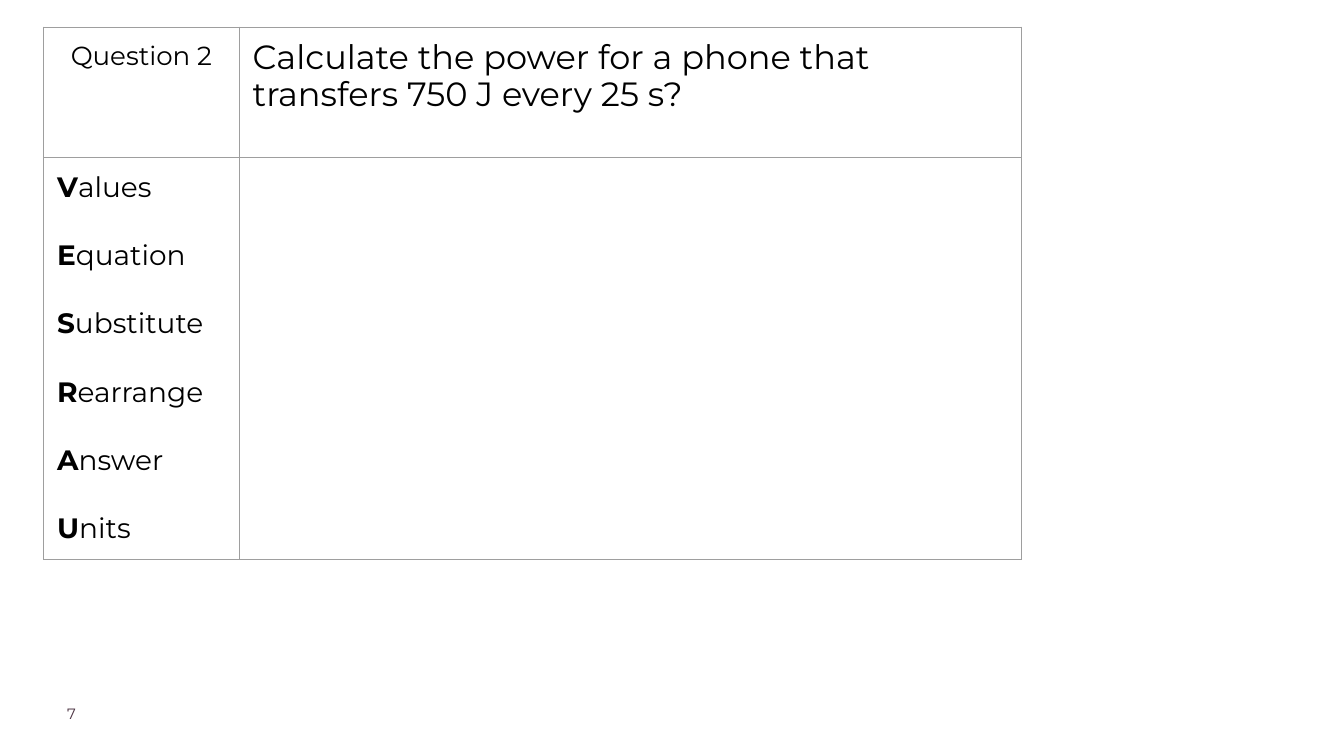
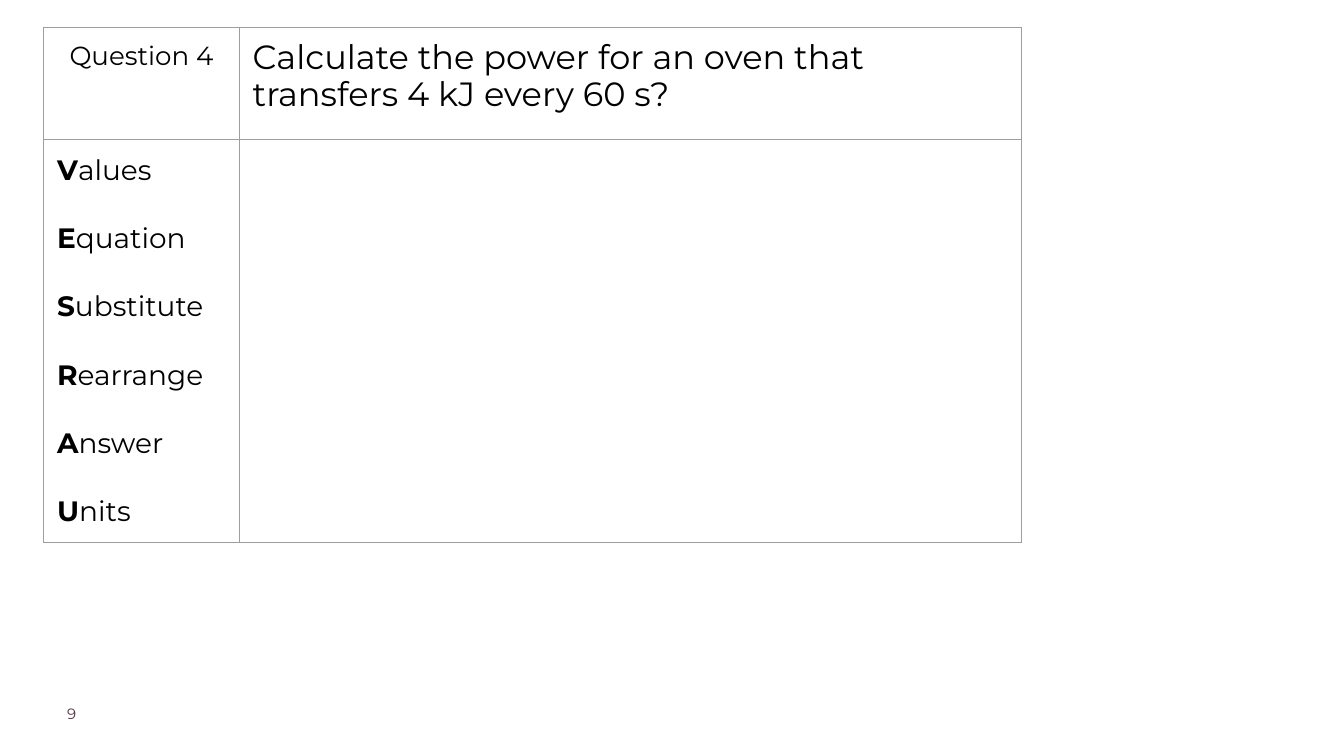
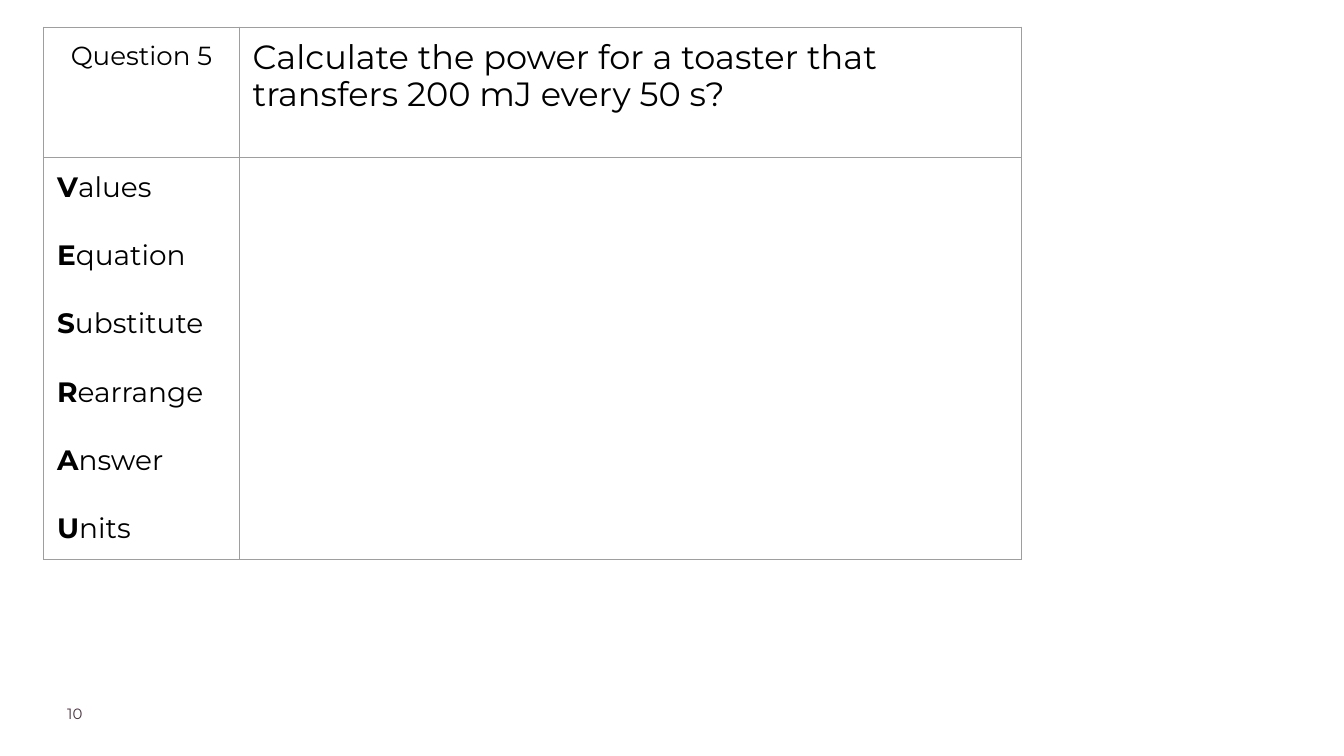
from lxml.etree import fromstring
from pptx import Presentation
from pptx.dml.color import RGBColor
from pptx.enum.text import PP_ALIGN
from pptx.oxml.ns import nsdecls
from pptx.util import Pt

FONT = "Montserrat"
COLORS = {"text": "000000", "number": "4B3241", "border": "9E9E9E"}
STEPS = ["Values", "Equation", "Substitute", "Rearrange", "Answer", "Units"]
COL_WIDTHS = (209.5, 838)
STEPS_HEIGHT = 431.5
CELL_MARGIN = 14.4

# Page number, question label, question, height of the question row
QUESTIONS = [
    (7, "Question 2",
     "Calculate the power for a phone that transfers 750 J every 25 s?", 139.3),
    (9, "Question 4",
     "Calculate the power for an oven that transfers 4 kJ every 60 s?", 121),
    (10, "Question 5",
     "Calculate the power for a toaster that transfers 200 mJ every 50 s?", 139.3),
]


def add_run(p, text, size, color="text", bold=False):
    r = p.add_run()
    r.text = text
    r.font.name = FONT
    r.font.size = Pt(size)
    r.font.bold = bold
    r.font.color.rgb = RGBColor.from_string(COLORS[color])


def style_cell(cell):
    cell.margin_left = cell.margin_right = Pt(CELL_MARGIN)
    cell.margin_top = cell.margin_bottom = Pt(CELL_MARGIN)
    cell.fill.background()
    # Borders come before the fill in the cell properties
    tcPr = cell._tc.get_or_add_tcPr()
    for i, side in enumerate(("lnL", "lnR", "lnT", "lnB")):
        tcPr.insert(i, fromstring(
            f'<a:{side} {nsdecls("a")} w="{Pt(0.75)}"><a:solidFill>'
            f'<a:srgbClr val="{COLORS["border"]}"/></a:solidFill></a:{side}>'))


def add_steps(tf):
    for i, step in enumerate(STEPS):
        p = tf.add_paragraph() if i else tf.paragraphs[0]
        if i:
            p.space_before = Pt(36.57)  # one line of text
        add_run(p, step[0], 30, bold=True)
        add_run(p, step[1:], 30)


def add_question_table(s, label, question, question_height):
    heights = (question_height, STEPS_HEIGHT)
    table = s.shapes.add_table(2, 2, Pt(46.8), Pt(28.8),
                               Pt(sum(COL_WIDTHS)), Pt(sum(heights))).table
    table.first_row = table.horz_banding = False
    for col, width in zip(table.columns, COL_WIDTHS):
        col.width = Pt(width)
    for row, height in zip(table.rows, heights):
        row.height = Pt(height)
    for cell in table.iter_cells():
        style_cell(cell)

    p = table.cell(0, 0).text_frame.paragraphs[0]
    p.alignment = PP_ALIGN.CENTER
    add_run(p, label, 28)
    p = table.cell(0, 1).text_frame.paragraphs[0]
    p.line_spacing = 0.9
    add_run(p, question, 36)
    add_steps(table.cell(1, 0).text_frame)


def add_page_number(s, number):
    tf = s.shapes.add_textbox(Pt(72), Pt(754.5), Pt(113), Pt(28)).text_frame
    tf.word_wrap = True
    tf.margin_left = tf.margin_right = tf.margin_top = tf.margin_bottom = 0
    add_run(tf.paragraphs[0], str(number), 16, "number")


def main():
    prs = Presentation()
    prs.slide_width, prs.slide_height = Pt(1440), Pt(810)
    for number, label, question, height in QUESTIONS:
        s = prs.slides.add_slide(prs.slide_layouts[6])
        add_page_number(s, number)
        add_question_table(s, label, question, height)
    prs.save("out.pptx")


if __name__ == "__main__":
    main()
